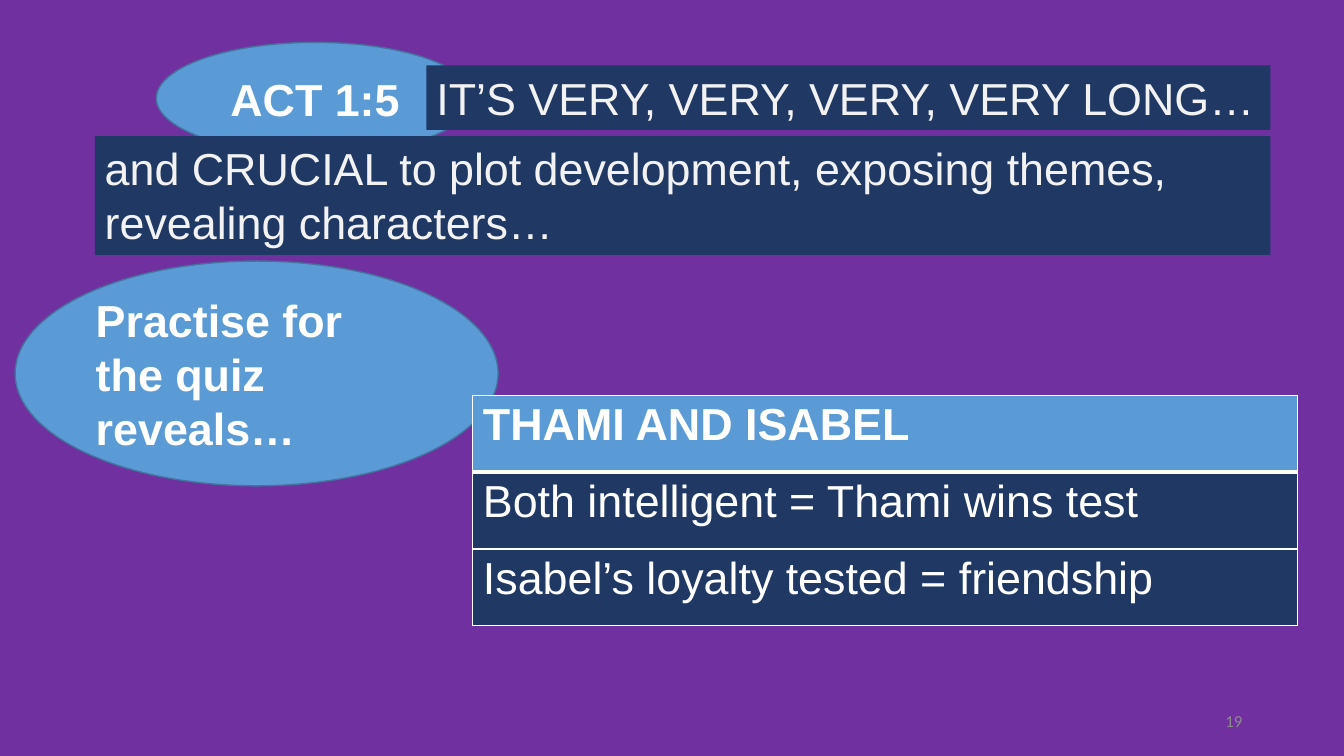
from lxml import etree
from pptx import Presentation
from pptx.dml.color import RGBColor
from pptx.enum.shapes import MSO_SHAPE
from pptx.enum.text import MSO_ANCHOR, PP_ALIGN
from pptx.oxml.ns import qn
from pptx.util import Inches, Pt

OVAL, BAR = MSO_SHAPE.OVAL, MSO_SHAPE.RECTANGLE
LEFT, CENTER, RIGHT = PP_ALIGN.LEFT, PP_ALIGN.CENTER, PP_ALIGN.RIGHT
TOP, MIDDLE = MSO_ANCHOR.TOP, MSO_ANCHOR.MIDDLE

PURPLE = RGBColor(0x70, 0x30, 0xA0)
BLUE = RGBColor(0x5B, 0x9B, 0xD5)
OUTLINE = RGBColor(0x43, 0x73, 0x9E)
NAVY = RGBColor(0x20, 0x38, 0x64)
WHITE = RGBColor(0xFF, 0xFF, 0xFF)
PALE = RGBColor(0xF2, 0xF2, 0xF2)
GREY = RGBColor(0x8C, 0x8C, 0x8C)

# Outline, box (left, top, width, height), alignment, wording; back to front
CALLOUTS = [
    (OVAL, (1.55, 0.42, 3.15, 1.11), CENTER, "ACT 1:5"),
    (BAR, (4.23, 0.65, 8.37, 0.64), LEFT, "IT’S VERY, VERY, VERY, VERY LONG…"),
    (BAR, (0.94, 1.35, 11.66, 1.18), LEFT,
     "and CRUCIAL to plot development, exposing themes, revealing characters…"),
    (OVAL, (0.15, 2.59, 4.79, 2.23), LEFT, "Practise for the quiz reveals…"),
]
FRIENDS = [
    "THAMI AND ISABEL",
    "Both intelligent = Thami wins test",
    "Isabel’s loyalty tested = friendship",
]
FRIENDS_BOX = (4.69, 3.92, 8.18, 2.29)
PAGE_NUMBER = "19"
PAGE_NUMBER_BOX = (9.42, 6.95, 3, 0.4)


def inches(box):
    return [Inches(length) for length in box]


def write(frame, wording, color, bold=False, align=LEFT, size=32, font="Arial"):
    paragraph = frame.paragraphs[0]
    paragraph.alignment = align
    run = paragraph.add_run()
    run.text = wording
    run.font.name = font
    run.font.size = Pt(size)
    run.font.bold = bold
    run.font.color.rgb = color


def add_callout(slide, outline, box, align, wording):
    callout = slide.shapes.add_shape(outline, *inches(box))
    callout.shadow.inherit = False
    callout.fill.solid()
    is_oval = outline == OVAL
    callout.fill.fore_color.rgb = BLUE if is_oval else NAVY
    if is_oval:
        callout.line.color.rgb = OUTLINE
        callout.line.width = Pt(1)
    else:
        callout.line.fill.background()
    frame = callout.text_frame
    frame.word_wrap = True
    frame.vertical_anchor = MIDDLE if is_oval else TOP
    write(frame, wording, WHITE if is_oval else PALE, is_oval, align)


def add_border(cell, side, points):
    properties = cell._tc.get_or_add_tcPr()
    line = etree.SubElement(properties, qn(f"a:ln{side}"), w=str(Pt(points)))
    fill = etree.SubElement(line, qn("a:solidFill"))
    etree.SubElement(fill, qn("a:srgbClr"), val=str(WHITE))


def add_friends_table(slide):
    table = slide.shapes.add_table(len(FRIENDS), 1, *inches(FRIENDS_BOX)).table
    for index, wording in enumerate(FRIENDS):
        cell = table.cell(index, 0)
        is_header = index == 0
        widths = {"L": 1, "R": 1, "T": 3 if index == 1 else 1, "B": 3 if is_header else 1}
        for side, points in widths.items():
            add_border(cell, side, points)
        cell.fill.solid()
        cell.fill.fore_color.rgb = BLUE if is_header else NAVY
        write(cell.text_frame, wording, WHITE, is_header)


def add_page_number(slide):
    frame = slide.shapes.add_textbox(*inches(PAGE_NUMBER_BOX)).text_frame
    frame.word_wrap = True
    frame.vertical_anchor = MIDDLE
    write(frame, PAGE_NUMBER, GREY, align=RIGHT, size=12, font="Calibri")


def main():
    deck = Presentation()
    deck.slide_width, deck.slide_height = Inches(13.33), Inches(7.5)
    blank_layout = deck.slide_layouts[6]
    slide = deck.slides.add_slide(blank_layout)
    slide.background.fill.solid()
    slide.background.fill.fore_color.rgb = PURPLE
    for callout in CALLOUTS:
        add_callout(slide, *callout)
    add_friends_table(slide)
    add_page_number(slide)
    deck.save("out.pptx")


if __name__ == "__main__":
    main()
